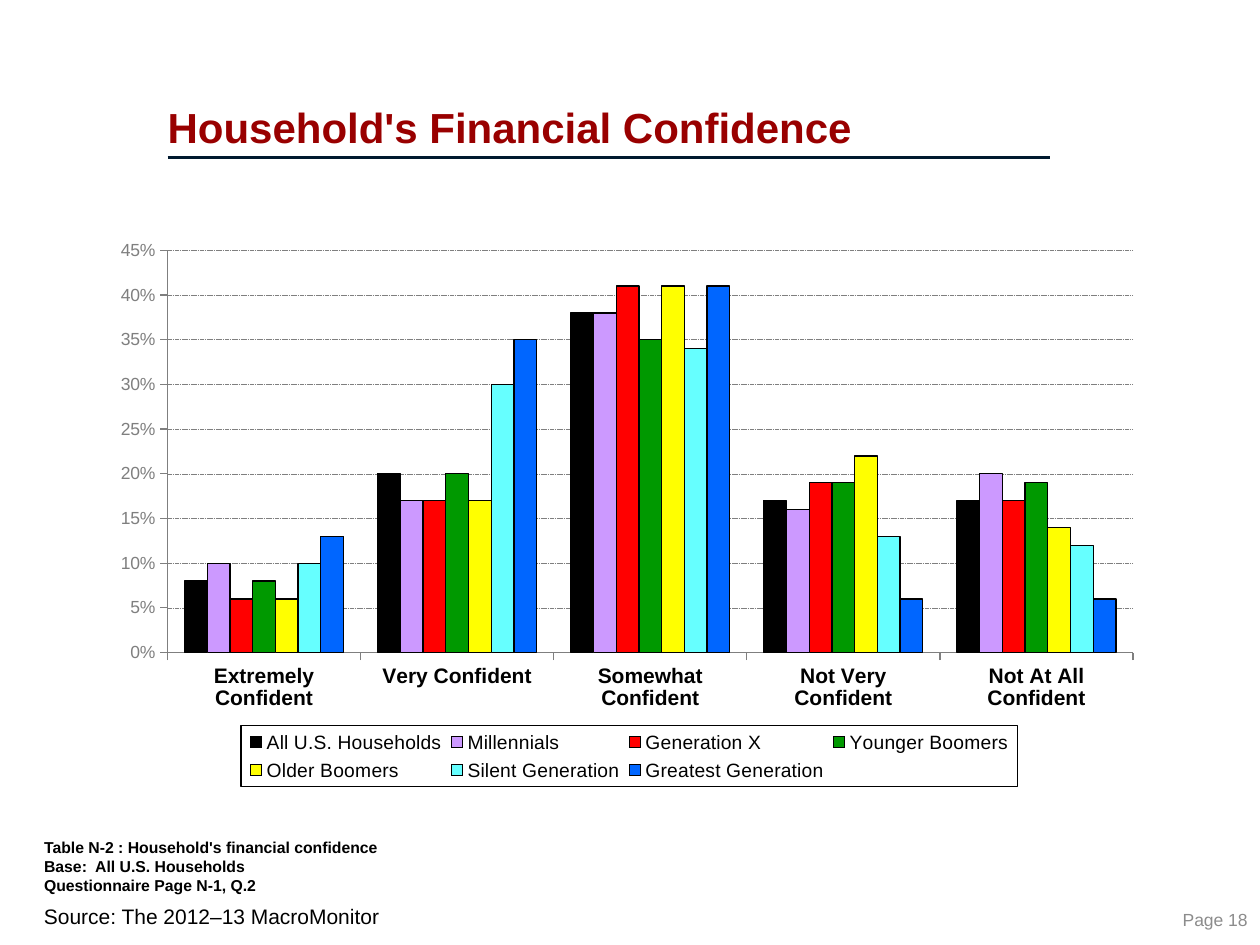
from dataclasses import dataclass

from lxml import etree
from pptx import Presentation
from pptx.chart.data import CategoryChartData
from pptx.dml.color import RGBColor
from pptx.enum.chart import XL_CHART_TYPE, XL_LEGEND_POSITION, XL_TICK_MARK
from pptx.enum.dml import MSO_LINE
from pptx.enum.shapes import MSO_CONNECTOR
from pptx.enum.text import MSO_ANCHOR, PP_ALIGN
from pptx.oxml import parse_xml
from pptx.oxml.ns import nsdecls, qn
from pptx.util import Inches, Pt

COLUMNS = XL_CHART_TYPE.COLUMN_CLUSTERED
BOTTOM_LEGEND = XL_LEGEND_POSITION.BOTTOM
OUTSIDE = XL_TICK_MARK.OUTSIDE
DASH = MSO_LINE.SQUARE_DOT
STRAIGHT = MSO_CONNECTOR.STRAIGHT
TOP, MIDDLE, BOTTOM = MSO_ANCHOR.TOP, MSO_ANCHOR.MIDDLE, MSO_ANCHOR.BOTTOM
LEFT, RIGHT = PP_ALIGN.LEFT, PP_ALIGN.RIGHT

FONT = "Arial"
COLORS = {
    "title": "990000", "rule": "00192F", "text": "000000",
    "axis": "7F7F7F", "page": "8C8C8C",
    "violet": "CC99FF", "red": "FF0000", "green": "009900",
    "yellow": "FFFF00", "cyan": "66FFFF", "blue": "0066FF",
}


@dataclass
class Series:
    name: str
    color: str
    values: tuple


@dataclass
class Note:
    text: str
    box: tuple
    size: int
    color: str = "text"
    bold: bool = False
    anchor: MSO_ANCHOR = TOP
    align: PP_ALIGN = LEFT
    insets: tuple = (0.1, 0.05, 0.1, 0.05)


CATEGORIES = ("Extremely Confident", "Very Confident", "Somewhat Confident",
              "Not Very Confident", "Not At All Confident")
SERIES = (
    Series("All U.S. Households", "text", (0.08, 0.20, 0.38, 0.17, 0.17)),
    Series("Millennials", "violet", (0.10, 0.17, 0.38, 0.16, 0.20)),
    Series("Generation X", "red", (0.06, 0.17, 0.41, 0.19, 0.17)),
    Series("Younger Boomers", "green", (0.08, 0.20, 0.35, 0.19, 0.19)),
    Series("Older Boomers", "yellow", (0.06, 0.17, 0.41, 0.22, 0.14)),
    Series("Silent Generation", "cyan", (0.10, 0.30, 0.34, 0.13, 0.12)),
    Series("Greatest Generation", "blue", (0.13, 0.35, 0.41, 0.06, 0.06)),
)
NOTES = (
    Note("Source: The 2012–13 MacroMonitor", (0.25, 7.12, 8.58, 0.3), 12),
    Note("Page 18", (9.26, 7.16, 0.74, 0.27), 10, "page",
         anchor=MIDDLE, align=RIGHT, insets=(0, 0.05, 0.1, 0.05)),
    Note("Table N-2 : Household's financial confidence\v"
         "Base:  All U.S. Households\vQuestionnaire Page N-1, Q.2",
         (0, 6.42, 7.02, 0.81), 9, bold=True, anchor=BOTTOM,
         insets=(0.35, 0.13, 0, 0.13)),
)


def rgb(name: str) -> RGBColor:
    return RGBColor.from_string(COLORS[name])


def format_font(font, size: int, color: str, bold: bool = False) -> None:
    for key, value in {"name": FONT, "size": Pt(size), "bold": bold}.items():
        setattr(font, key, value)
    font.color.rgb = rgb(color)


def format_line(line, color: str, width: float) -> None:
    line.color.rgb = rgb(color)
    line.width = Pt(width)


def format_frame(tf, anchor: MSO_ANCHOR, insets: tuple) -> None:
    sides = ("margin_left", "margin_top", "margin_right", "margin_bottom")
    for side, inset in zip(sides, insets):
        setattr(tf, side, Inches(inset))
    tf.word_wrap = True
    tf.vertical_anchor = anchor


def add_title(slide, text: str) -> None:
    title = slide.shapes.title
    places = {"left": 1.33, "top": 0.08, "width": 7.17, "height": 1.17}
    for key, value in places.items():
        setattr(title, key, Inches(value))
    format_frame(title.text_frame, BOTTOM, (0, 0.05, 0, 0.05))
    p = title.text_frame.paragraphs[0]
    p.alignment, p.line_spacing = LEFT, 0.8
    r = p.add_run()
    r.text = text
    format_font(r.font, 24, "title", True)


def add_rule(slide) -> None:
    rule = slide.shapes.add_connector(
        STRAIGHT, Inches(1.33), Inches(1.25), Inches(8.33), Inches(1.25))
    format_line(rule.line, "rule", 2)
    etree.SubElement(rule._element.spPr, qn("a:effectLst"))


def add_note(slide, note: Note) -> None:
    sp = slide.shapes.add_textbox(*map(Inches, note.box))
    format_frame(sp.text_frame, note.anchor, note.insets)
    p = sp.text_frame.paragraphs[0]
    p.text, p.alignment = note.text, note.align
    for r in p.runs:
        format_font(r.font, note.size, note.color, note.bold)


def set_layout(element, after: str, inner: bool, box: tuple) -> None:
    """Fix a chart part at fractions (x, y, w, h) of the chart area."""
    for old in element.findall(qn("c:layout")):
        element.remove(old)
    target = '<c:layoutTarget val="inner"/>' if inner else ""
    modes = '<c:xMode val="edge"/><c:yMode val="edge"/>'
    sizes = "".join(f'<c:{k} val="{v}"/>' for k, v in zip("xywh", box))
    layout = parse_xml(f'<c:layout {nsdecls("c")}><c:manualLayout>'
                       f'{target}{modes}{sizes}</c:manualLayout></c:layout>')
    if after:
        element.find(qn(after)).addnext(layout)
    else:
        element.insert(0, layout)


def format_axes(chart) -> None:
    for axis in (chart.category_axis, chart.value_axis):
        axis.major_tick_mark = OUTSIDE
        format_line(axis.format.line, "axis", 0.75)
    format_font(chart.category_axis.tick_labels.font, 12, "text", True)
    values = chart.value_axis
    values.minimum_scale, values.maximum_scale = 0, 0.45
    values.major_unit = 0.05
    labels = values.tick_labels
    labels.number_format, labels.number_format_is_linked = "0%", False
    format_font(labels.font, 10, "axis")
    grid = values.major_gridlines.format.line
    format_line(grid, "axis", 0.25)
    grid.dash_style = DASH


def add_confidence_chart(slide) -> None:
    data = CategoryChartData(number_format="0%")
    data.categories = CATEGORIES
    for series in SERIES:
        data.add_series(series.name, series.values)
    chart = slide.shapes.add_chart(
        COLUMNS, *map(Inches, (0.83, 1.81, 8.33, 4.44)), data).chart
    format_font(chart.font, 10, "text")
    chart.has_title = False
    format_axes(chart)

    plot = chart.plots[0]
    plot.gap_width, plot.overlap, plot.vary_by_categories = 150, 0, False
    for bars, series in zip(plot.series, SERIES):
        bars.invert_if_negative = False
        bars.format.fill.solid()
        bars.format.fill.fore_color.rgb = rgb(series.color)
        format_line(bars.format.line, "text", 0.75)

    chart.has_legend = True
    legend = chart.legend
    legend.position, legend.include_in_layout = BOTTOM_LEGEND, False
    format_font(legend.font, 11, "text")
    border = parse_xml(
        f'<c:spPr {nsdecls("c", "a")}><a:noFill/><a:ln w="9525"><a:solidFill>'
        f'<a:srgbClr val="{COLORS["text"]}"/></a:solidFill></a:ln></c:spPr>')
    legend._element.find(qn("c:txPr")).addprevious(border)
    set_layout(legend._element, "c:legendPos", False, (0.13, 0.89, 0.74, 0.11))
    plot_area = chart._chartSpace.chart.plotArea
    set_layout(plot_area, "", True, (0.06, 0.04, 0.92, 0.72))


def main() -> None:
    prs = Presentation()
    prs.slide_width, prs.slide_height = Inches(10), Inches(7.5)
    slide = prs.slides.add_slide(prs.slide_layouts[5])
    add_rule(slide)
    add_title(slide, "Household's Financial Confidence")
    add_confidence_chart(slide)
    for note in NOTES:
        add_note(slide, note)
    prs.save("out.pptx")


if __name__ == "__main__":
    main()
